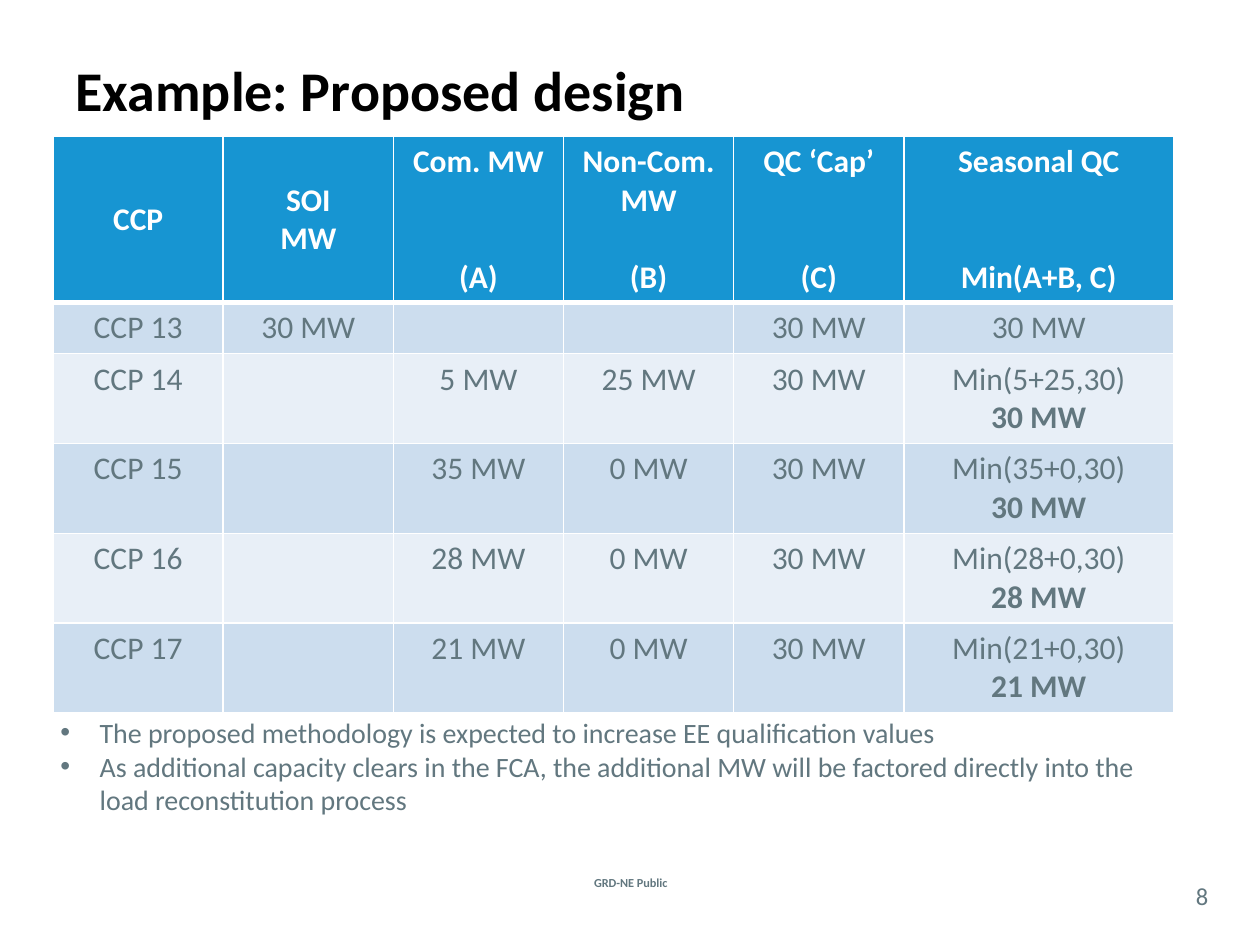
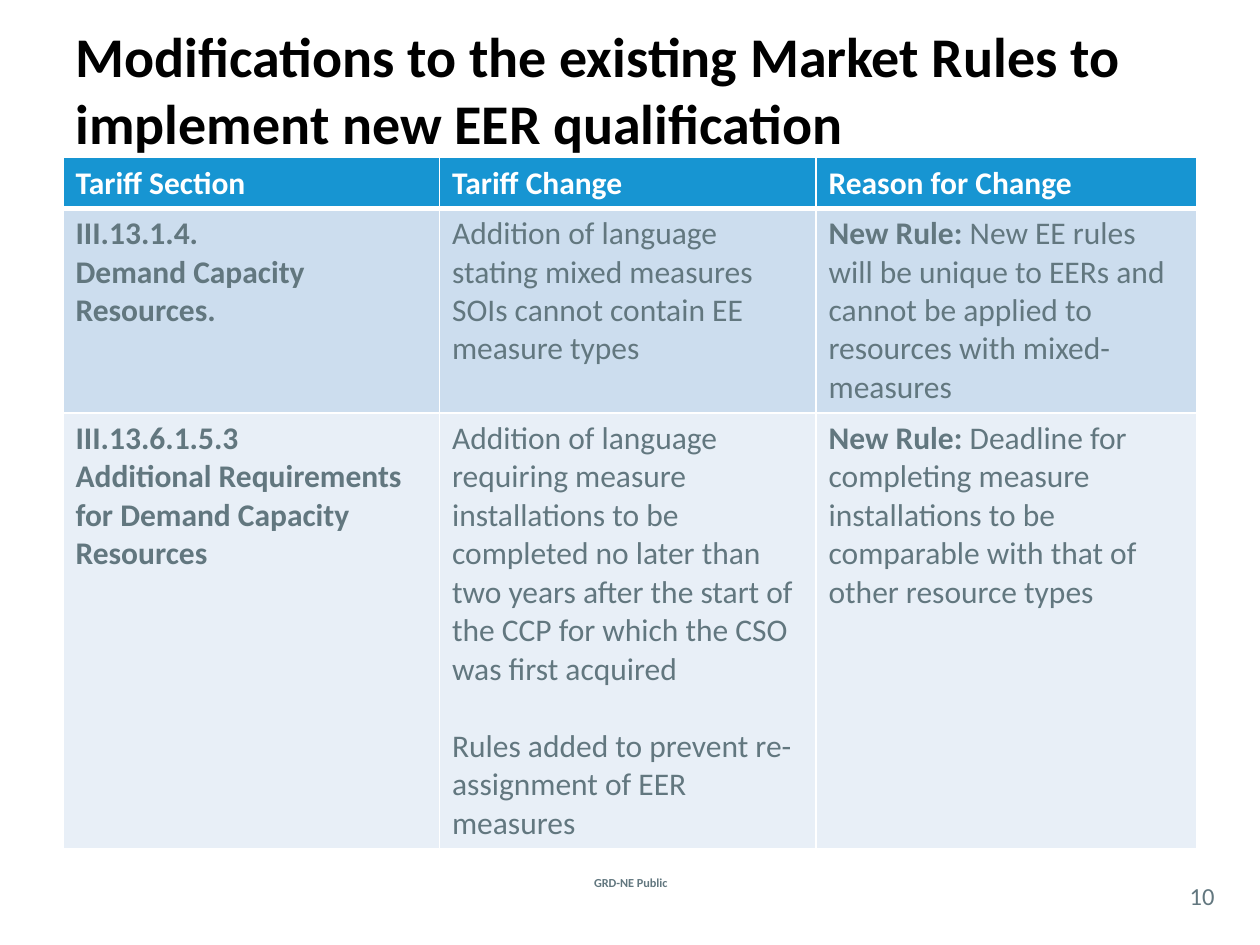
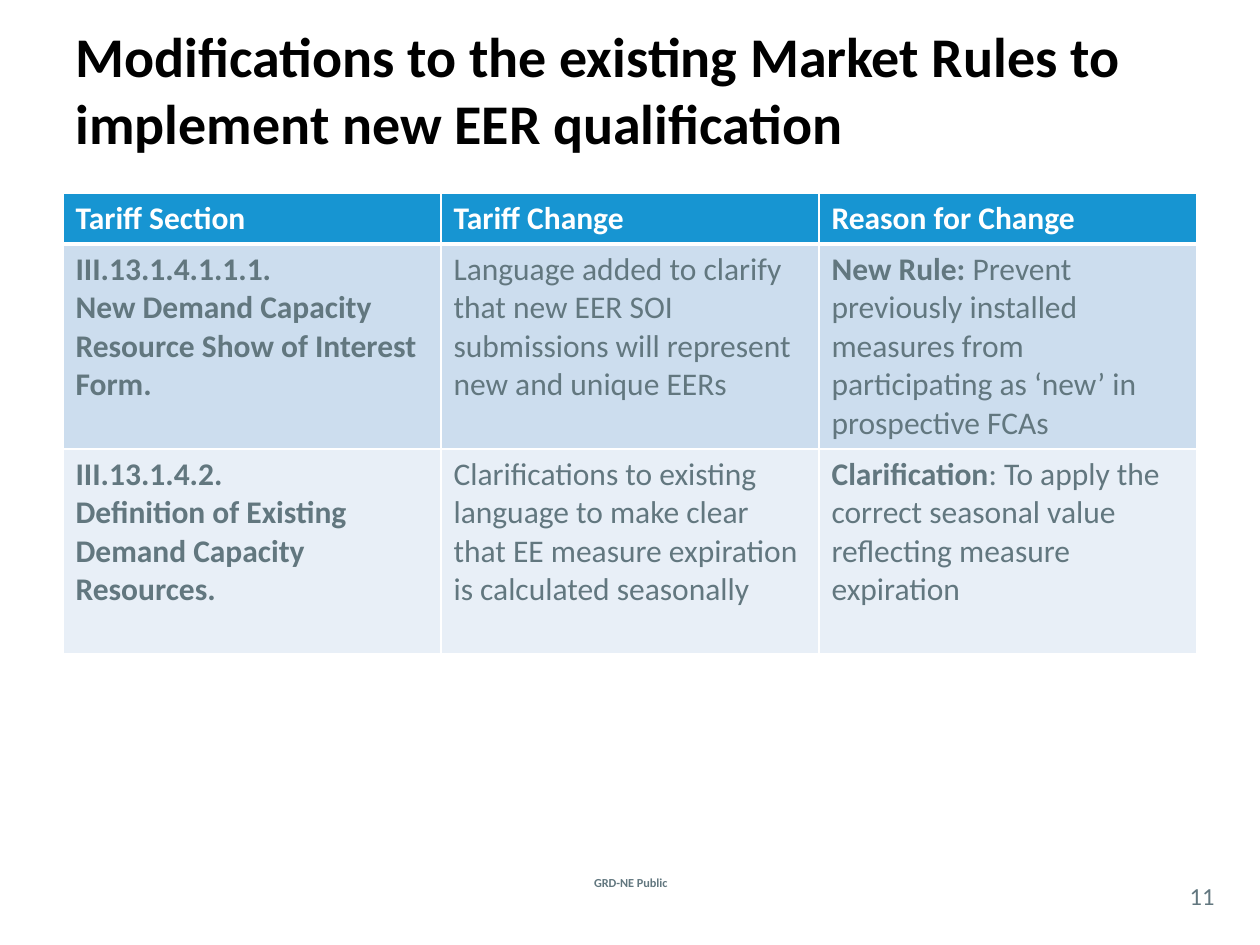
from dataclasses import dataclass

from lxml.etree import SubElement
from pptx import Presentation
from pptx.dml.color import RGBColor
from pptx.enum.text import MSO_ANCHOR as Anchor, MSO_AUTO_SIZE as AutoSize, PP_ALIGN as Align
from pptx.oxml.ns import qn
from pptx.util import Cm, Pt

# Shared look
FONT = "Calibri"
BLACK = RGBColor(0x00, 0x00, 0x00)
WHITE = RGBColor(0xFF, 0xFF, 0xFF)
SLATE = RGBColor(0x62, 0x77, 0x7F)
HEADER_BLUE = RGBColor(0x17, 0x95, 0xD2)
BAND_FILLS = (RGBColor(0xCC, 0xDD, 0xEE), RGBColor(0xE8, 0xEF, 0xF7))
CELL_SIZE = 18
CELL_LINE = 22  # line height of cell text, in points
THIN, THICK = 1, 3


@dataclass
class Box:
    """A region of the slide, in centimetres."""
    left: float
    top: float
    width: float
    height: float

    def lengths(self):
        return Cm(self.left), Cm(self.top), Cm(self.width), Cm(self.height)


TITLE_BOX = Box(1.27, 0.2, 22.86, 3.18)
FOOTER_BOX = Box(10.85, 17.15, 3.73, 1.27)
NUMBER_BOX = Box(23.7, 17.68, 1.07, 0.74)
NOTES_BOX = Box(0.97, 14.3, 23.16, 2.31)

# Content: *...* is bold, a blank line is a gap
DESIGN_TITLE = "Example: Proposed design"
DESIGN_ROWS = [
    ["CCP", "SOI\nMW", "Com. MW\n\n\n(A)", "Non-Com.\nMW\n\n(B)", "QC ‘Cap’\n\n\n(C)",
     "Seasonal QC\n\n\nMin(A+B, C)"],
    ["CCP 13", "30 MW", "", "", "30 MW", "30 MW"],
    ["CCP 14", "", "5 MW", "25 MW", "30 MW", "Min(5+25,30)\n*30 MW*"],
    ["CCP 15", "", "35 MW", "0 MW", "30 MW", "Min(35+0,30)\n*30 MW*"],
    ["CCP 16", "", "28 MW", "0 MW", "30 MW", "Min(28+0,30)\n*28 MW*"],
    ["CCP 17", "", "21 MW", "0 MW", "30 MW", "Min(21+0,30)\n*21 MW*"],
]
DESIGN_NOTES = [
    "The proposed methodology is expected to increase EE qualification values",
    "As additional capacity clears in the FCA, the additional MW will be factored directly "
    "into the load reconstitution process",
]
RULES_TITLE = "Modifications to the existing Market Rules to implement new EER qualification"
RULES_HEADER = ["Tariff Section", "Tariff Change", "Reason for Change"]
RESOURCE_RULES = [
    RULES_HEADER,
    ["*III.13.1.4.*\n*Demand Capacity Resources.*",
     "Addition of language stating mixed measures SOIs cannot contain EE measure types",
     "*New Rule:* New EE rules will be unique to EERs and cannot be applied to resources "
     "with mixed-measures"],
    ["*III.13.6.1.5.3*\n*Additional Requirements for Demand Capacity Resources*",
     "Addition of language requiring measure installations to be completed no later than "
     "two years after the start of the CCP for which the CSO was first acquired\n\n"
     "Rules added to prevent re-assignment of EER measures",
     "*New Rule:* Deadline for completing measure installations to be comparable with that "
     "of other resource types"],
]
INTEREST_RULES = [
    RULES_HEADER,
    ["*III.13.1.4.1.1.1.*\n*New Demand Capacity Resource Show of Interest Form.*",
     "Language added to clarify that new EER SOI submissions will represent new and unique EERs",
     "*New Rule:* Prevent previously installed measures from participating as ‘new’ in "
     "prospective FCAs"],
    ["*III.13.1.4.2.*\n*Definition of Existing Demand Capacity Resources.*",
     "Clarifications to existing language to make clear that EE measure expiration is "
     "calculated seasonally",
     "*Clarification*: To apply the correct seasonal value reflecting measure expiration"],
]


def style_font(font, size, color, bold=False):
    font.name = FONT
    font.size = Pt(size)
    font.color.rgb = color
    font.bold = bold


def add_label(page, box, text, size, bold=False, inset=None):
    """One centred line of text, such as the footer or the page number."""
    label = page.shapes.add_textbox(*box.lengths())
    frame = label.text_frame
    frame.word_wrap = True
    frame.vertical_anchor = Anchor.MIDDLE
    if inset is not None:
        frame.margin_left = frame.margin_right = Cm(inset)
        frame.margin_top = frame.margin_bottom = Cm(inset)
    para = frame.paragraphs[0]
    para.text = text
    para.alignment = Align.CENTER
    style_font(para.font, size, SLATE, bold)


def add_page(deck, title, number):
    """Title, footer and page number common to all slides."""
    page = deck.slides.add_slide(deck.slide_layouts[5])
    heading = page.shapes.title
    heading.left, heading.top, heading.width, heading.height = TITLE_BOX.lengths()
    frame = heading.text_frame
    frame.text = title
    frame.word_wrap = True
    frame.auto_size = AutoSize.NONE
    frame.vertical_anchor = Anchor.MIDDLE
    para = frame.paragraphs[0]
    para.alignment = Align.LEFT
    style_font(para.font, 32, BLACK, True)
    add_label(page, FOOTER_BOX, "GRD-NE Public", 7, bold=True)
    add_label(page, NUMBER_BOX, str(number), 14, inset=0)
    return page


def set_borders(cell, top, bottom):
    properties = cell._tc.get_or_add_tcPr()
    for side, width in (("L", THIN), ("R", THIN), ("T", top), ("B", bottom)):
        line = SubElement(properties, qn(f"a:ln{side}"), w=str(Pt(width)))
        fill = SubElement(line, qn("a:solidFill"))
        SubElement(fill, qn("a:srgbClr"), val=str(WHITE))


def fill_text(cell, text, color, bold, align):
    frame = cell.text_frame
    para, gap = frame.paragraphs[0], 0
    for index, line in enumerate(text.split("\n")):
        if index and not line:
            gap += CELL_LINE
            continue
        if index:
            para = frame.add_paragraph()
        if gap:
            para.space_before = Pt(gap)
            gap = 0
        para.alignment = align
        para.font.name = FONT
        para.font.size = Pt(CELL_SIZE)
        for part, words in enumerate(line.split("*")):
            if words:
                span = para.add_run()
                span.text = words
                style_font(span.font, CELL_SIZE, color, bold or part % 2 == 1)


def add_grid(page, left, top, widths, heights, rows, align):
    """Table with a blue header row and two alternating body fills."""
    box = Box(left, top, sum(widths), sum(heights))
    table = page.shapes.add_table(len(rows), len(widths), *box.lengths()).table
    for column, width in zip(table.columns, widths):
        column.width = Cm(width)
    for index, (row, height, texts) in enumerate(zip(table.rows, heights, rows)):
        row.height = Cm(height)
        is_header = index == 0
        for cell, text in zip(row.cells, texts):
            set_borders(cell, THICK if index == 1 else THIN, THICK if is_header else THIN)
            cell.fill.solid()
            cell.fill.fore_color.rgb = HEADER_BLUE if is_header else BAND_FILLS[(index - 1) % 2]
            cell.vertical_anchor = Anchor.MIDDLE if is_header else Anchor.TOP
            fill_text(cell, text, WHITE if is_header else SLATE, is_header, align)


def add_bullets(page, box, items):
    frame = page.shapes.add_textbox(*box.lengths()).text_frame
    frame.word_wrap = True
    for index, item in enumerate(items):
        para = frame.add_paragraph() if index else frame.paragraphs[0]
        para.text = item
        properties = para._p.get_or_add_pPr()
        properties.set("marL", str(Cm(0.79)))
        properties.set("indent", str(-Cm(0.79)))
        SubElement(properties, qn("a:buFont"), typeface="Arial")
        SubElement(properties, qn("a:buChar"), char="•")
        style_font(para.font, 16, SLATE)


def main():
    deck = Presentation()
    deck.slide_width, deck.slide_height = Cm(25.4), Cm(19.05)

    # Worked example
    page = add_page(deck, DESIGN_TITLE, 8)
    add_grid(page, 1.07, 2.75, [3.43] * 5 + [5.44], [3.35, 1.03] + [1.81] * 4,
             DESIGN_ROWS, Align.CENTER)
    add_bullets(page, NOTES_BOX, DESIGN_NOTES)

    # Rule changes
    page = add_page(deck, RULES_TITLE, 10)
    add_grid(page, 1.27, 3.18, [7.59, 7.59, 7.67], [1.02, 4.13, 8.79],
             RESOURCE_RULES, Align.LEFT)
    page = add_page(deck, RULES_TITLE, 11)
    add_grid(page, 1.27, 3.9, [7.62] * 3, [1.02, 4.13, 4.13], INTEREST_RULES, Align.LEFT)

    deck.save("out.pptx")


if __name__ == "__main__":
    main()
